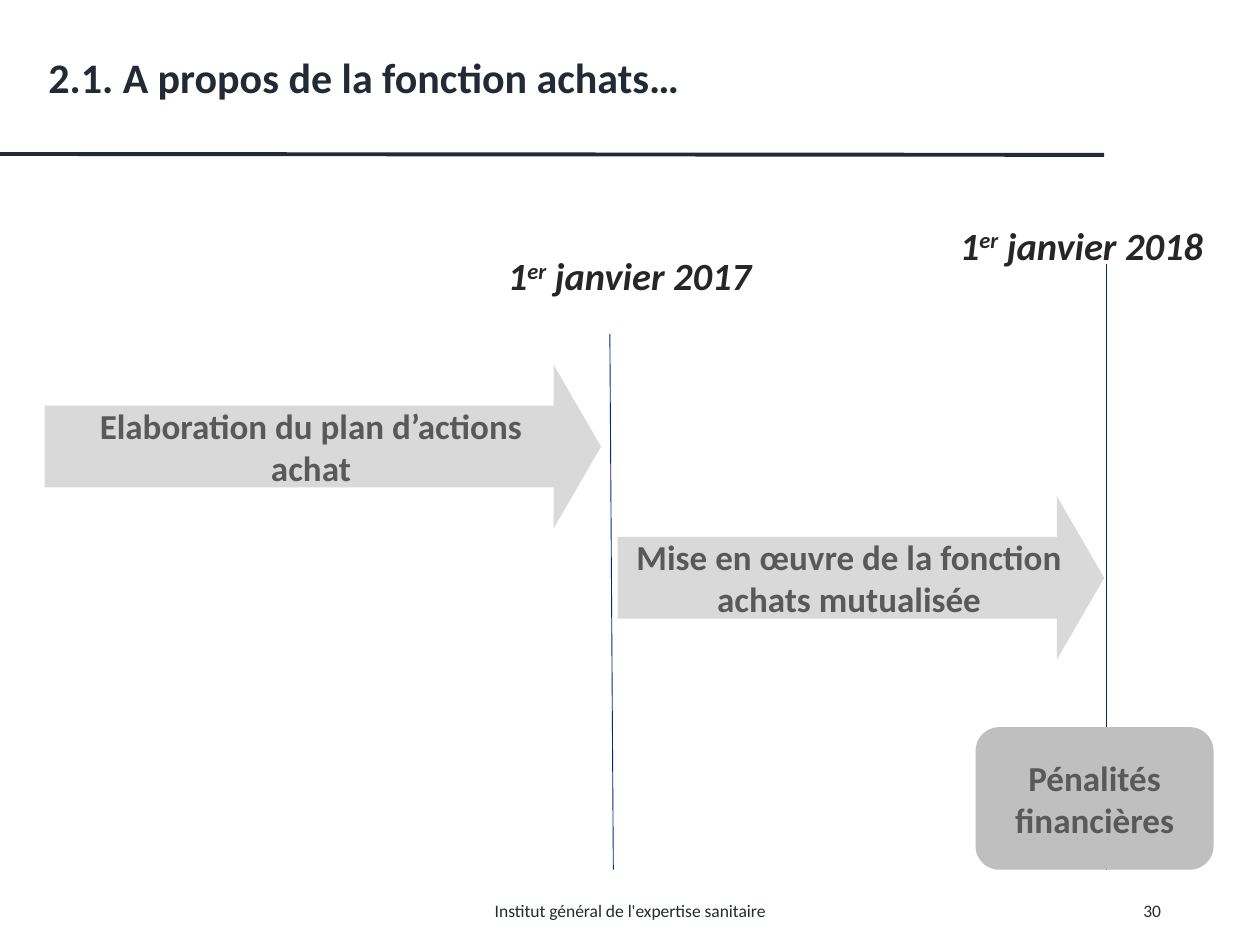
import pptx
import pptx.dml.color
import pptx.enum.shapes
import pptx.enum.text
import pptx.oxml.ns
import pptx.util
from lxml import etree

Pt = pptx.util.Pt
RGBColor = pptx.dml.color.RGBColor
SHAPE = pptx.enum.shapes.MSO_SHAPE
ALIGN = pptx.enum.text.PP_ALIGN
ANCHOR = pptx.enum.text.MSO_ANCHOR

FONT = "Calibri"
NAVY = RGBColor(0x22, 0x2A, 0x35)
BLUE = RGBColor(0x00, 0x2C, 0x77)
NEAR_BLACK = RGBColor(0x26, 0x26, 0x26)
DARK_GREY = RGBColor(0x59, 0x59, 0x59)
MID_GREY = RGBColor(0xBF, 0xBF, 0xBF)
LIGHT_GREY = RGBColor(0xD9, 0xD9, 0xD9)


def in_points(values):
    return [Pt(value) for value in values]


def format_text(shape, size, color, alignment, bold=False, italic=False):
    text_frame = shape.text_frame
    text_frame.word_wrap = True
    text_frame.auto_size = pptx.enum.text.MSO_AUTO_SIZE.NONE
    text_frame.vertical_anchor = ANCHOR.MIDDLE
    for paragraph in text_frame.paragraphs:
        paragraph.alignment = alignment
        for run in paragraph.runs:
            run.font.name = FONT
            run.font.size = Pt(size)
            run.font.color.rgb = color
            run.font.bold = bold
            run.font.italic = italic


def add_line(slide, ends, color, width):
    line = slide.shapes.add_connector(
        pptx.enum.shapes.MSO_CONNECTOR.STRAIGHT, *in_points(ends))
    line.line.color.rgb = color
    line.line.width = Pt(width)
    etree.SubElement(line._element.spPr, pptx.oxml.ns.qn("a:effectLst"))


def add_plain_shape(slide, kind, box, fill=None):
    shape = slide.shapes.add_shape(kind, *in_points(box))
    shape.shadow.inherit = False
    shape.line.fill.background()
    if fill is None:
        shape.fill.background()
    else:
        shape.fill.solid()
        shape.fill.fore_color.rgb = fill
    return shape


def add_title(slide, box, text):
    title = slide.shapes.title
    title.left, title.top, title.width, title.height = in_points(box)
    title.text_frame.text = text
    format_text(title, 24, NAVY, ALIGN.LEFT, bold=True)
    title.text_frame.margin_left = Pt(12.6)


def add_date(slide, box, year):
    label = add_plain_shape(slide, SHAPE.ROUNDED_RECTANGLE, box)
    paragraph = label.text_frame.paragraphs[0]
    for text in ("1", "er", f" janvier {year}"):
        paragraph.add_run().text = text
    format_text(label, 22, NEAR_BLACK, ALIGN.CENTER, bold=True, italic=True)
    paragraph.runs[1].font._element.set("baseline", "30000")


def add_step(slide, box, text):
    arrow = add_plain_shape(slide, SHAPE.RIGHT_ARROW, box, LIGHT_GREY)
    arrow.adjustments[1] = 0.29
    arrow.text_frame.text = text
    format_text(arrow, 20, DARK_GREY, ALIGN.CENTER, bold=True)


def add_penalty(slide, box, text):
    penalty = add_plain_shape(slide, SHAPE.ROUNDED_RECTANGLE, box, MID_GREY)
    penalty.text_frame.text = text
    format_text(penalty, 20, DARK_GREY, ALIGN.CENTER, bold=True)


def add_footer_text(slide, box, text, alignment):
    footer = slide.shapes.add_textbox(*in_points(box))
    footer.text_frame.text = text
    format_text(footer, 10, NAVY, alignment)


def main():
    presentation = pptx.Presentation()
    presentation.slide_width, presentation.slide_height = Pt(720), Pt(540)
    slide = presentation.slides.add_slide(presentation.slide_layouts[5])

    add_title(slide, (15, 12.5, 587, 63), "2.1. A propos de la fonction achats…")
    add_line(slide, (0, 88, 631, 88.5), NAVY, 2.25)

    add_line(slide, (348.5, 191, 350.5, 497), BLUE, 0.5)
    add_line(slide, (632, 151, 632, 497), BLUE, 0.5)
    add_date(slide, (535, 124.5, 166, 31), 2018)
    add_date(slide, (217.5, 140, 284.5, 34.5), 2017)

    add_penalty(slide, (557.5, 415.5, 136, 81.5), "Pénalités financières")
    add_step(slide, (353, 283.5, 278, 93.5),
             "Mise en œuvre de la fonction achats mutualisée")
    add_step(slide, (25.5, 208.5, 318, 93.5),
             "Elaboration du plan d’actions achat")

    add_footer_text(slide, (238.5, 505.5, 243, 29),
                    "Institut général de l'expertise sanitaire", ALIGN.CENTER)
    add_footer_text(slide, (508.5, 505.5, 162, 29), "30", ALIGN.RIGHT)

    presentation.save("out.pptx")


if __name__ == "__main__":
    main()
